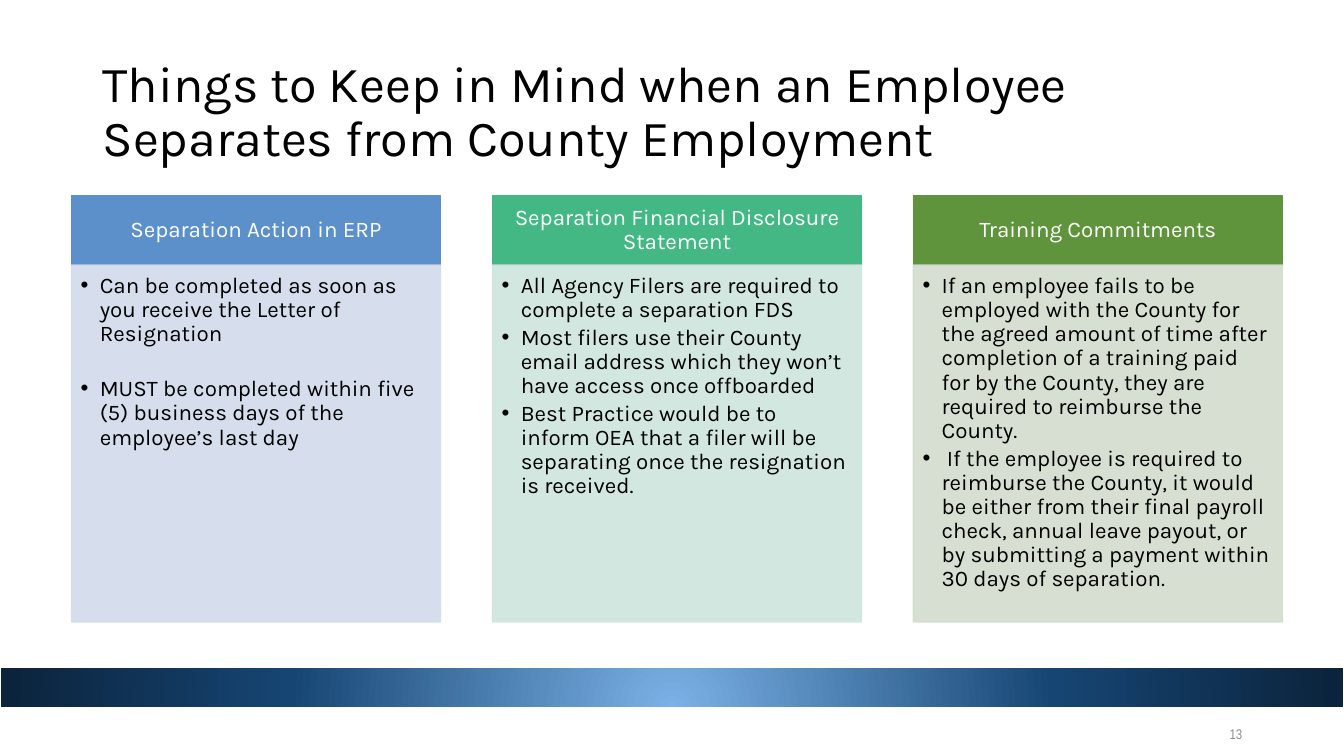
import lxml.etree
import pptx
import pptx.dml.color
import pptx.enum.shapes
import pptx.enum.text
import pptx.oxml
import pptx.oxml.ns
import pptx.util

WIDTH, HEIGHT = 13.33, 7.5
COLUMN_LEFT, COLUMN_PITCH, COLUMN_WIDTH = 0.71, 4.175, 3.66
HEADING_TOP, HEADING_HEIGHT = 1.94, 0.69
BODY_HEIGHT = 3.54
BULLET_GAP, WIDE_GAP = 2.4, 22
COLORS = {
    "title": "000000",
    "heading": "FFFFFF",
    "number": "8C8C8C",
    "border": "FFFFFF",
    "center": "7BB1E6",
    "middle": "164573",
    "edge": "0B233B",
}
TOPICS = [
    ("Separation Action in ERP", "5C90CA", "D2DBEC", WIDE_GAP, [
        "Can be completed as soon as you receive the Letter of Resignation",
        "MUST be completed within five (5) business days of the employee’s last day",
    ]),
    ("Separation Financial Disclosure Statement", "43B884", "CFE5DE", BULLET_GAP, [
        "All Agency Filers are required to complete a separation FDS",
        "Most filers use their County email address which they won’t have access once offboarded",
        "Best Practice would be to inform OEA that a filer will be separating once the "
        "resignation is received.",
    ]),
    ("Training Commitments", "60943C", "D2DCCE", BULLET_GAP, [
        "If an employee fails to be employed with the County for the agreed amount of time after "
        "completion of a training paid for by the County, they are required to reimburse the County.",
        " If the employee is required to reimburse the County, it would be either from their final "
        "payroll check, annual leave payout, or by submitting a payment within 30 days of separation.",
    ]),
]


def inches(*lengths):
    """Convert lengths in inches to slide units."""
    return [pptx.util.Inches(length) for length in lengths]


def rgb(color):
    """Make a colour from its hex string."""
    return pptx.dml.color.RGBColor.from_string(color)


def format_text(paragraph, size, color, font="Karla", align="LEFT", spacing=0.9):
    """Set the alignment, line spacing and run fonts of a paragraph."""
    paragraph.alignment = getattr(pptx.enum.text.PP_ALIGN, align)
    paragraph.line_spacing = spacing
    for run in paragraph.runs:
        run.font.name = font
        run.font.size = pptx.util.Pt(size)
        run.font.color.rgb = rgb(color)


def set_frame(frame, anchor, margins):
    """Set wrapping, anchor and insets (left, top, right, bottom) of a text frame."""
    frame.word_wrap = True
    frame.vertical_anchor = getattr(pptx.enum.text.MSO_ANCHOR, anchor)
    (frame.margin_left, frame.margin_top,
     frame.margin_right, frame.margin_bottom) = inches(*margins)


def add_label(slide, box, text, size, color, **style):
    """Add a one-paragraph text box centred vertically."""
    frame = slide.shapes.add_textbox(*inches(*box)).text_frame
    set_frame(frame, "MIDDLE", (0.1, 0.05, 0.1, 0.05))
    frame.text = text
    format_text(frame.paragraphs[0], size, color, **style)


def add_panel(slide, box, color, opacity=100):
    """Add a filled rectangle and return its text frame."""
    panel = slide.shapes.add_shape(pptx.enum.shapes.MSO_SHAPE.RECTANGLE, *inches(*box))
    panel.shadow.inherit = False
    panel.fill.solid()
    panel.fill.fore_color.rgb = rgb(color)
    panel.line.color.rgb = rgb(color)
    panel.line.width = pptx.util.Pt(1)
    if opacity < 100:
        for tint in panel._element.spPr.iter(pptx.oxml.ns.qn("a:srgbClr")):
            lxml.etree.SubElement(tint, pptx.oxml.ns.qn("a:alpha"), val=str(opacity * 1000))
    return panel.text_frame


def add_bullet(paragraph):
    """Give a paragraph a hanging round bullet."""
    properties = paragraph._p.get_or_add_pPr()
    indent = pptx.util.Inches(0.19)
    properties.set("marL", str(indent))
    properties.set("indent", str(-indent))
    lxml.etree.SubElement(properties, pptx.oxml.ns.qn("a:buFont"), typeface="Arial")
    lxml.etree.SubElement(properties, pptx.oxml.ns.qn("a:buChar"), char="•")


def add_topic(slide, column, heading, heading_color, body_color, gap, points):
    """Add one column with its heading and bulleted body."""
    left = COLUMN_LEFT + column * COLUMN_PITCH
    head = add_panel(slide, (left, HEADING_TOP, COLUMN_WIDTH, HEADING_HEIGHT), heading_color)
    set_frame(head, "MIDDLE", (0.12, 0.07, 0.12, 0.07))
    head.text = heading
    format_text(head.paragraphs[0], 16, COLORS["heading"], align="CENTER")

    body_top = HEADING_TOP + HEADING_HEIGHT
    body = add_panel(slide, (left, body_top, COLUMN_WIDTH, BODY_HEIGHT), body_color, 90)
    set_frame(body, "TOP", (0.09, 0.09, 0.12, 0.14))
    body.text = "\n".join(points)
    for paragraph in body.paragraphs:
        add_bullet(paragraph)
        format_text(paragraph, 16, COLORS["title"])
        paragraph.space_after = pptx.util.Pt(gap)


def add_band(slide):
    """Add the one-cell table with a radial gradient across the slide."""
    table = slide.shapes.add_table(1, 1, *inches(0, 6.62, WIDTH, 0.41)).table
    table.first_row = table.horz_banding = False
    cell = table.cell(0, 0)
    cell.margin_top = cell.margin_bottom = 0
    properties = cell._tc.get_or_add_tcPr()
    namespace = pptx.oxml.ns.nsdecls("a")
    for side, points in (("L", 1), ("R", 1), ("T", 1), ("B", 3)):
        properties.append(pptx.oxml.parse_xml(
            f'<a:ln{side} {namespace} w="{pptx.util.Pt(points)}"><a:solidFill>'
            f'<a:srgbClr val="{COLORS["border"]}"/></a:solidFill></a:ln{side}>'))
    stops = "".join(
        f'<a:gs pos="{share * 1000}"><a:srgbClr val="{COLORS[name]}"/></a:gs>'
        for share, name in ((0, "center"), (57, "middle"), (100, "edge")))
    properties.append(pptx.oxml.parse_xml(
        f'<a:gradFill {namespace} rotWithShape="1"><a:gsLst>{stops}</a:gsLst>'
        '<a:path path="circle"><a:fillToRect l="50000" t="130000" r="50000" b="-30000"/>'
        '</a:path></a:gradFill>'))


def main():
    """Build the slide and save it."""
    deck = pptx.Presentation()
    deck.slide_width, deck.slide_height = inches(WIDTH, HEIGHT)
    slide = deck.slides.add_slide(deck.slide_layouts[6])
    add_band(slide)
    add_label(slide, (0.92, 0.4, 11.5, 1.45),
              "Things to Keep in Mind when an Employee Separates from County Employment",
              36, COLORS["title"])
    for column, topic in enumerate(TOPICS):
        add_topic(slide, column, *topic)
    add_label(slide, (9.42, 7.19, 3, 0.19), "13", 10, COLORS["number"],
              font="Arial Narrow", align="RIGHT", spacing=1.0)
    deck.save("out.pptx")


if __name__ == "__main__":
    main()
